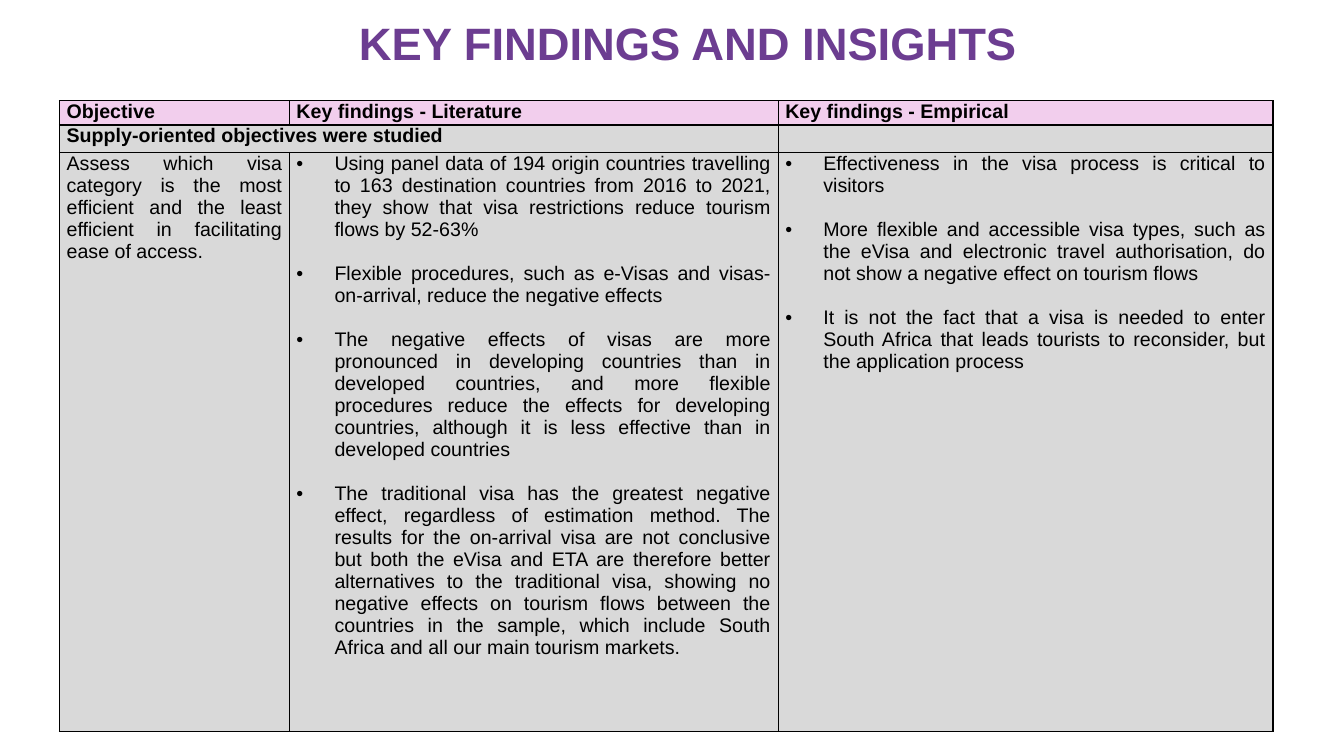
from lxml import etree
from pptx import Presentation
from pptx.dml.color import RGBColor
from pptx.enum.text import MSO_ANCHOR, PP_ALIGN
from pptx.oxml.ns import qn
from pptx.util import Cm, Pt

CENTER, JUSTIFY = PP_ALIGN.CENTER, PP_ALIGN.JUSTIFY
MIDDLE = MSO_ANCHOR.MIDDLE
FONT = "Arial"
TEXT_SIZE = Pt(14)
COLORS = {
    "title": "6C3D91",
    "text": "000000",
    "border": "000000",
    "header": "F2CEED",
    "body": "D9D9D9",
}
COLUMN_WIDTHS = [Cm(5.79), Cm(12.32), Cm(12.47)]
ROW_HEIGHTS = [Cm(0.61), Cm(0.69), Cm(14.6)]
BULLET_INDENT = Cm(0.96)

ROWS = [
    [["Objective"], ["Key findings - Literature"], ["Key findings - Empirical"]],
    [["Supply-oriented objectives were studied"], [], []],
    [
        ["Assess which visa category is the most efficient and the least efficient "
         "in facilitating ease of access."],
        [
            "Using panel data of 194 origin countries travelling to 163 destination "
            "countries from 2016 to 2021, they show that visa restrictions reduce "
            "tourism flows by 52-63%",
            "Flexible procedures, such as e-Visas and visas-on-arrival, reduce the "
            "negative effects",
            "The negative effects of visas are more pronounced in developing countries "
            "than in developed countries, and more flexible procedures reduce the "
            "effects for developing countries, although it is less effective than in "
            "developed countries",
            "The traditional visa has the greatest negative effect, regardless of "
            "estimation method. The results for the on-arrival visa are not conclusive "
            "but both the eVisa and ETA are therefore better alternatives to the "
            "traditional visa, showing no negative effects on tourism flows between "
            "the countries in the sample, which include South Africa and all our main "
            "tourism markets.",
        ],
        [
            "Effectiveness in the visa process is critical to visitors",
            "More flexible and accessible visa types, such as the eVisa and electronic "
            "travel authorisation, do not show a negative effect on tourism flows",
            "It is not the fact that a visa is needed to enter South Africa that leads "
            "tourists to reconsider, but the application process",
        ],
    ],
]


def add_borders(cell):
    """Draw a thin line on all four sides, ahead of the fill as the schema asks."""
    properties = cell._tc.get_or_add_tcPr()
    for position, side in enumerate(("a:lnL", "a:lnR", "a:lnT", "a:lnB")):
        line = etree.Element(qn(side), w=str(Pt(1)))
        fill = etree.SubElement(line, qn("a:solidFill"))
        etree.SubElement(fill, qn("a:srgbClr"), val=COLORS["border"])
        properties.insert(position, line)


def add_bullet(paragraph):
    properties = paragraph._p.get_or_add_pPr()
    properties.set("marL", str(BULLET_INDENT))
    properties.set("indent", str(-BULLET_INDENT))
    etree.SubElement(properties, qn("a:buFont"), typeface=FONT)
    etree.SubElement(properties, qn("a:buChar"), char="•")


presentation = Presentation()
presentation.slide_width = Cm(33.87)
presentation.slide_height = Cm(19.05)
slide = presentation.slides.add_slide(presentation.slide_layouts[6])

# Title
title = slide.shapes.add_textbox(Cm(4.29), Cm(0.48), Cm(26.09), Cm(1.35))
title_frame = title.text_frame
title_frame.word_wrap = True
title_frame.vertical_anchor = MIDDLE
title_frame.margin_top = title_frame.margin_bottom = 0
title_frame.text = "KEY FINDINGS AND INSIGHTS"
title_paragraph = title_frame.paragraphs[0]
title_paragraph.alignment = CENTER
title_paragraph.line_spacing = 0.9
title_font = title_paragraph.runs[0].font
title_font.name = FONT
title_font.size = Pt(32.4)
title_font.bold = True
title_font.color.rgb = RGBColor.from_string(COLORS["title"])

# Findings table
table = slide.shapes.add_table(
    len(ROW_HEIGHTS), len(COLUMN_WIDTHS), Cm(1.5), Cm(2.54),
    sum(COLUMN_WIDTHS), sum(ROW_HEIGHTS),
).table
table.first_row = False
table.horz_banding = False
for column, width in zip(table.columns, COLUMN_WIDTHS):
    column.width = width
for row, height in zip(table.rows, ROW_HEIGHTS):
    row.height = height

for row_index, row_texts in enumerate(ROWS):
    fill_color = COLORS["header" if row_index == 0 else "body"]
    for column_index, texts in enumerate(row_texts):
        cell = table.cell(row_index, column_index)
        cell.margin_left = cell.margin_right = Cm(0.18)
        cell.margin_top = cell.margin_bottom = 0
        cell.fill.solid()
        cell.fill.fore_color.rgb = RGBColor.from_string(fill_color)
        add_borders(cell)

        cell.text_frame.text = "\n".join(texts)
        for paragraph_index, paragraph in enumerate(cell.text_frame.paragraphs):
            paragraph.alignment = JUSTIFY
            if paragraph_index > 0:
                paragraph.space_before = Pt(15.8)
            if len(texts) > 1:
                add_bullet(paragraph)
            if not texts:
                # An empty cell needs its own text size to keep the row low
                etree.SubElement(paragraph._p, qn("a:endParaRPr"),
                                 sz=str(int(TEXT_SIZE.pt * 100)))
            for run in paragraph.runs:
                run.font.name = FONT
                run.font.size = TEXT_SIZE
                run.font.bold = row_index < 2
                run.font.color.rgb = RGBColor.from_string(COLORS["text"])

table.cell(1, 0).merge(table.cell(1, 1))

presentation.save("out.pptx")
